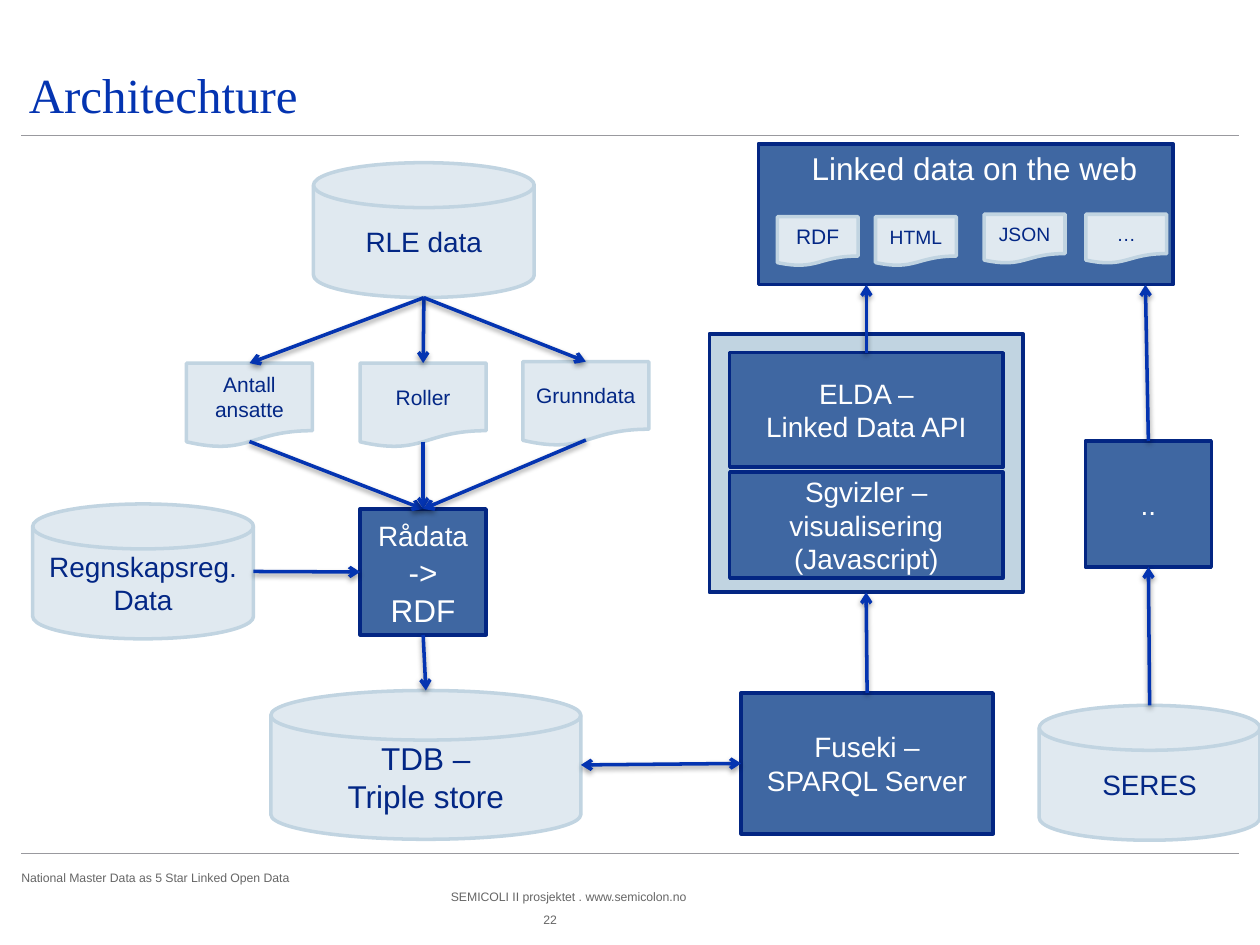
from dataclasses import dataclass

from lxml import etree
from pptx import Presentation
from pptx import util as u
from pptx.dml.color import RGBColor as Rgb
from pptx.enum import shapes, text
from pptx.oxml.ns import qn

Kind = shapes.MSO_SHAPE
Align = text.PP_ALIGN
Anchor = text.MSO_ANCHOR


@dataclass(frozen=True)
class Theme:
    body: str = "Arial"
    serif: str = "Times New Roman"
    white: str = "FFFFFF"
    ink: str = "032785"
    edge: str = "032683"
    deep: str = "3F67A2"
    pale: str = "E0E9F0"
    mist: str = "C1D4E1"
    link: str = "0434B1"
    rule: str = "99999E"
    grey: str = "666666"
    title: int = 28
    large: int = 18
    mid: int = 16
    small: int = 12
    tiny: int = 11
    foot: int = 7
    thick: int = 2
    thin: float = 0.5


T = Theme()
DARK = (T.deep, T.edge, T.white)
LIGHT = (T.pale, T.mist, T.ink)
FRAME = (T.mist, T.edge, T.ink)


def color(hue):
    return Rgb.from_string(hue)


def style(font, size, hue, name=T.body):
    font.name, font.size = name, u.Pt(size)
    font.color.rgb = color(hue)


def write(frame, lines, size, hue, align=Align.CENTER):
    frame.word_wrap = True
    frame.vertical_anchor = Anchor.MIDDLE
    frame.text = "\n".join(lines)
    for para in frame.paragraphs:
        para.alignment = align
        style(para.font, size, hue)


def node(slide, kind, look, box, *lines, size=T.mid):
    """Draw one filled shape; box is left, top, width, height in cm."""
    fill, edge, ink = look
    shape = slide.shapes.add_shape(kind, *map(u.Cm, box))
    shape.shadow.inherit = False
    shape.fill.solid()
    shape.fill.fore_color.rgb = color(fill)
    shape.line.color.rgb = color(edge)
    shape.line.width = u.Pt(T.thick)
    if lines:
        write(shape.text_frame, lines, size, ink)
    return shape


def label(slide, box, words, size, hue, align=Align.LEFT):
    """Add a text box without margins."""
    frame = slide.shapes.add_textbox(*map(u.Cm, box)).text_frame
    frame.margin_left = frame.margin_right = 0
    frame.margin_top = frame.margin_bottom = 0
    write(frame, [words], size, hue, align)
    return frame


def port(shape, side):
    """Return the middle of a side; a document ends above its box."""
    x, y = {"top": (0.5, 0), "left": (0, 0.5),
            "right": (1, 0.5), "base": (0.5, 1)}[side]
    if side == "base" and shape.auto_shape_type == Kind.FLOWCHART_DOCUMENT:
        y = 0.93
    return (int(shape.left + x * shape.width),
            int(shape.top + y * shape.height))


def line(slide, start, end, hue, width):
    wire = slide.shapes.add_connector(
        shapes.MSO_CONNECTOR.STRAIGHT, *start, *end)
    wire.line.color.rgb = color(hue)
    wire.line.width = u.Pt(width)
    props = wire.element.spPr
    return props.find(qn("a:ln")), etree.SubElement(props, qn("a:effectLst"))


def arrow(slide, start, end, both=False):
    stroke, effects = line(slide, start, end, T.link, T.thick)
    for tip in ("a:headEnd", "a:tailEnd") if both else ("a:tailEnd",):
        etree.SubElement(stroke, qn(tip), type="arrow")
    shade = etree.SubElement(
        effects, qn("a:outerShdw"), blurRad=str(u.Pt(3.1)),
        dist=str(u.Pt(1.6)), dir="5400000", rotWithShape="0")
    black = etree.SubElement(shade, qn("a:srgbClr"), val="000000")
    etree.SubElement(black, qn("a:alpha"), val="38000")


def heading(slide, x, y, wide, high):
    title = slide.shapes.title
    title.left, title.top = u.Cm(x), u.Cm(y)
    title.width, title.height = u.Cm(wide), u.Cm(high)
    frame = title.text_frame
    frame.text = "Architechture"
    frame.auto_size = text.MSO_AUTO_SIZE.NONE
    frame.vertical_anchor = Anchor.BOTTOM
    frame.margin_left = frame.margin_right = u.Cm(0.15)
    frame.margin_top = frame.margin_bottom = 0
    para = frame.paragraphs[0]
    para.alignment = Align.LEFT
    style(para.font, T.title, T.link, T.serif)


def rule(slide, x, y, wide):
    line(slide, (u.Cm(x), u.Cm(y)), (u.Cm(x + wide), u.Cm(y)), T.rule, T.thin)


def footer(slide, x, y, wide):
    rule(slide, x, y, wide)
    for left, top, span, words, align in (
        (0, 0.35, 9, "National Master Data as 5 Star Linked Open Data",
         Align.LEFT),
        (8.66, 0.73, 9, "SEMICOLI II prosjektet . www.semicolon.no",
         Align.LEFT),
        (10.16, 1.19, 1, "22", Align.CENTER),
    ):
        label(slide, (x + left, y + top, span, 0.3), words, T.foot, T.grey,
              align)


def disk(slide, x, y, *lines):
    return node(slide, Kind.FLOWCHART_MAGNETIC_DISK, LIGHT,
                (x, y, 4.45, 2.72), *lines)


def ingest(slide, x, y):
    """Draw the registers, their extracts and the store; return the store."""
    source = disk(slide, x + 5.66, y, "RLE data")
    books = disk(slide, x, y + 6.88, "Regnskapsreg. Data")
    store = node(slide, Kind.FLOWCHART_MAGNETIC_DISK, LIGHT,
                 (x + 4.8, y + 10.64, 6.25, 3), "TDB –", "Triple store",
                 size=T.large)
    convert = node(slide, Kind.RECTANGLE, DARK,
                   (x + 6.6, y + 6.98, 2.54, 2.54), "Rådata")
    run = convert.text_frame.paragraphs[0].add_run()
    run.text = " -> RDF"
    run.font.size = u.Pt(T.large)
    for left, top, words in ((3.1, 4.04, "Antall ansatte"),
                             (6.6, 4.04, "Roller"),
                             (9.88, 4.01, "Grunndata")):
        sheet = node(slide, Kind.FLOWCHART_DOCUMENT, LIGHT,
                     (x + left, y + top, 2.54, 1.7), words, size=T.small)
        arrow(slide, port(source, "base"), port(sheet, "top"))
        arrow(slide, port(sheet, "base"), port(convert, "top"))
    arrow(slide, port(books, "right"), port(convert, "left"))
    arrow(slide, port(convert, "base"), port(store, "top"))
    return store


def serve(slide, x, y):
    """Draw the query server below its clients; return the API and server."""
    box = Kind.FLOWCHART_PROCESS
    frame = node(slide, box, FRAME, (x, y, 6.32, 5.21))
    api = node(slide, box, DARK, (x + 0.41, y + 0.38, 5.51, 2.31),
               "ELDA –", "Linked Data API")
    node(slide, box, DARK, (x + 0.41, y + 2.79, 5.51, 2.13),
         "Sgvizler –", "visualisering (Javascript)")
    server = node(slide, box, DARK, (x + 0.64, y + 7.24, 5.08, 2.84),
                  "Fuseki –", "SPARQL Server")
    arrow(slide, port(server, "top"), port(frame, "base"))
    return api, server


def web(slide, x, y, wide, high):
    panel = node(slide, Kind.RECTANGLE, DARK, (x, y, wide, high))
    for left, top, words, size in ((0.38, 1.47, "RDF", T.small),
                                   (2.36, 1.47, "HTML", T.tiny),
                                   (4.55, 1.42, "JSON", T.tiny),
                                   (6.6, 1.42, "…", T.tiny)):
        node(slide, Kind.FLOWCHART_DOCUMENT, LIGHT,
             (x + left, y + top, 1.63, 0.99), words, size=size)
    frame = label(slide, (x + 1.07, y + 0.08, 6.8, 0.8),
                  "Linked data on the web", T.large, T.white)
    frame.word_wrap = False
    return panel


def other(slide, x, y):
    """Draw the second register and its step; return the step."""
    step = node(slide, Kind.RECTANGLE, DARK, (x + 0.93, y, 2.54, 2.54), "..")
    base = disk(slide, x, y + 5.33, "SERES")
    arrow(slide, port(base, "top"), port(step, "base"))
    return step


def main():
    deck = Presentation()
    deck.slide_width, deck.slide_height = u.Cm(25.4), u.Cm(19.05)
    slide = deck.slides.add_slide(deck.slide_layouts[5])
    heading(slide, 0.43, 0.41, 24.56, 2.08)
    rule(slide, 0.43, 2.74, 24.54)
    footer(slide, 0.43, 17.2, 24.54)
    store = ingest(slide, 0.66, 3.28)
    api, server = serve(slide, 14.3, 6.73)
    panel = web(slide, 15.29, 2.9, 8.36, 2.84)
    step = other(slide, 20.95, 8.89)
    floor = port(panel, "base")[1]
    arrow(slide, port(store, "right"), port(server, "left"), both=True)
    arrow(slide, port(api, "top"), (port(api, "top")[0], floor))
    arrow(slide, port(step, "top"), (u.Cm(23.09), floor))
    deck.save("out.pptx")


if __name__ == "__main__":
    main()
